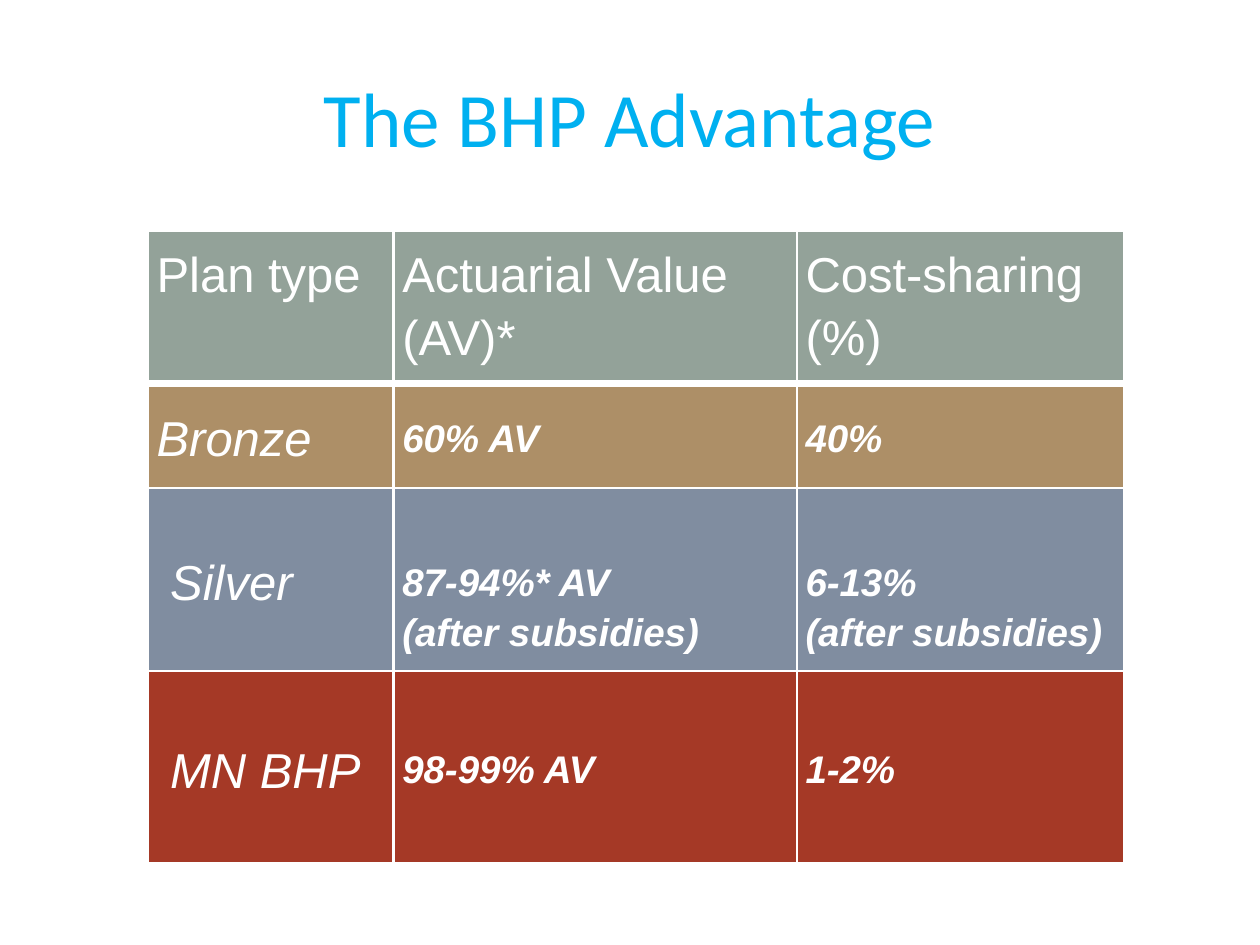
from lxml.etree import SubElement
from pptx import Presentation
from pptx.dml.color import RGBColor
from pptx.enum.text import MSO_ANCHOR, PP_ALIGN
from pptx.oxml.ns import qn
from pptx.util import Pt

COLORS = {
    "title": "00B0F0",
    "white": "FFFFFF",
    "header": "93A299",
    "bronze": "AD8F67",
    "silver": "808DA0",
    "state": "A53926",
}
INSET = 5
THIN, THICK = 1.42, 4.27
COLUMN_WIDTHS = (140.4, 230.4, 187.2)
HEADINGS = ("Plan type", "Actuarial Value (AV)*", "Cost-sharing (%)")
PLANS = (
    {"cells": ("Bronze", "60% AV", "40%"), "color": "bronze", "height": 59.5},
    {"cells": ("Silver", "87-94%* AV\n(after subsidies)", "6-13%\n(after subsidies)"),
     "color": "silver", "height": 104.5, "indent": 7.8, "drop": 29},
    {"cells": ("MN BHP", "98-99% AV", "1-2%"), "color": "state", "height": 110,
     "indent": 7.8},
)


def write_text(frame, text, *, size, color="white", font="Arial", bold=False,
               italic=False, align=PP_ALIGN.LEFT, spacing=1.0):
    """Write each line of text as one formatted paragraph."""
    for index, line in enumerate(text.split("\n")):
        para = frame.add_paragraph() if index else frame.paragraphs[0]
        para.alignment = align
        para.line_spacing = spacing
        span = para.add_run()
        span.text = line
        span.font.size = Pt(size)
        span.font.name = font
        span.font.bold = bold
        span.font.italic = italic
        span.font.color.rgb = RGBColor.from_string(COLORS[color])


def add_title(page, text, left, top, width, height):
    """Place the centred slide title in the given box."""
    box = page.shapes.add_textbox(Pt(left), Pt(top), Pt(width), Pt(height))
    frame = box.text_frame
    frame.word_wrap = True
    frame.vertical_anchor = MSO_ANCHOR.MIDDLE
    write_text(frame, text, size=44, color="title", font="Calibri",
               align=PP_ALIGN.CENTER)


def style_cell(cell, color, *, top=THIN, bottom=THIN, indent=0, drop=0,
               anchor=MSO_ANCHOR.MIDDLE):
    """Give a cell its borders, fill, margins and anchor."""
    properties = cell._tc.get_or_add_tcPr()
    for tag, weight in (("lnL", THIN), ("lnR", THIN), ("lnT", top), ("lnB", bottom)):
        line = SubElement(properties, qn(f"a:{tag}"), w=str(int(Pt(weight))))
        fill = SubElement(line, qn("a:solidFill"))
        SubElement(fill, qn("a:srgbClr"), val=COLORS["white"])
    cell.fill.solid()
    cell.fill.fore_color.rgb = RGBColor.from_string(COLORS[color])
    cell.margin_left = Pt(INSET + indent)
    cell.margin_top = Pt(INSET + drop)
    cell.margin_right = cell.margin_bottom = Pt(INSET)
    cell.vertical_anchor = anchor


def add_plan_table(page, left, top, header_height):
    """Place the plan comparison table with its corner at left and top."""
    height = header_height + sum(plan["height"] for plan in PLANS)
    table = page.shapes.add_table(
        len(PLANS) + 1, len(COLUMN_WIDTHS), Pt(left), Pt(top),
        Pt(sum(COLUMN_WIDTHS)), Pt(height)).table
    for column, width in zip(table.columns, COLUMN_WIDTHS):
        column.width = Pt(width)
    table.rows[0].height = Pt(header_height)
    for cell, heading in zip(table.rows[0].cells, HEADINGS):
        style_cell(cell, "header", bottom=THICK, anchor=MSO_ANCHOR.TOP)
        write_text(cell.text_frame, heading, size=28, spacing=1.15)
    for number, plan in enumerate(PLANS, start=1):
        row = table.rows[number]
        row.height = Pt(plan["height"])
        for index, (cell, text) in enumerate(zip(row.cells, plan["cells"])):
            is_name = index == 0
            style_cell(cell, plan["color"], top=THICK if number == 1 else THIN,
                       indent=plan.get("indent", 0) if is_name else 0,
                       drop=0 if is_name else plan.get("drop", 0))
            write_text(cell.text_frame, text, size=28 if is_name else 22,
                       bold=not is_name, italic=True, spacing=1.15)


def main():
    """Build and save the slide."""
    deck = Presentation()
    deck.slide_width, deck.slide_height = Pt(720), Pt(540)
    page = deck.slides.add_slide(deck.slide_layouts[6])
    add_title(page, "The BHP Advantage", 36, 21.6, 648, 90)
    add_plan_table(page, 84.5, 132, 81.5)
    deck.save("out.pptx")


if __name__ == "__main__":
    main()
